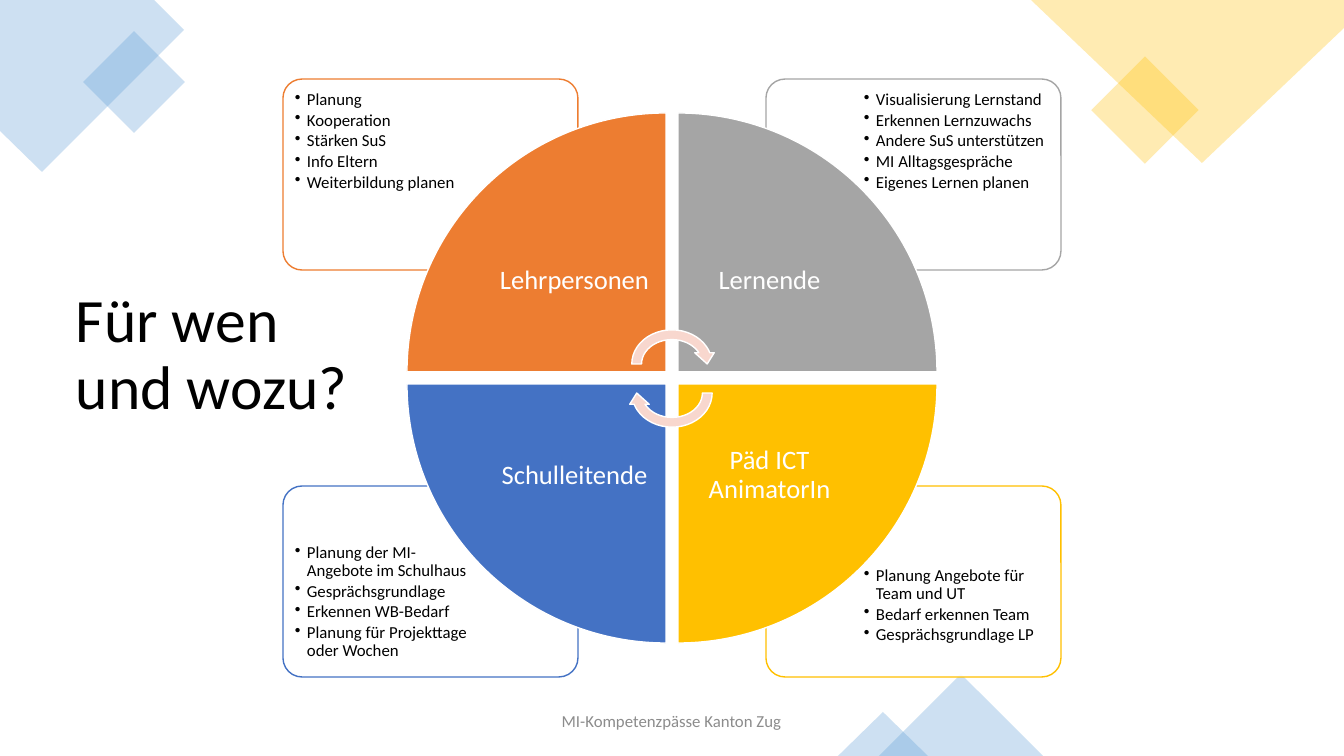
import lxml.etree
import pptx
import pptx.dml.color
import pptx.enum.shapes
import pptx.enum.text
import pptx.oxml.ns
import pptx.util

SHAPE = pptx.enum.shapes.MSO_SHAPE
ALIGN = pptx.enum.text.PP_ALIGN
ANCHOR = pptx.enum.text.MSO_ANCHOR
WIDTH, HEIGHT = 1344, 756
BLUE, YELLOW, WHITE = "5B9BD5", "FFC000", "FFFFFF"

# Colour, title, bullets, right half?, lower half?, wedge rotation, top inset of bullets
QUADRANTS = [
    (YELLOW, "Päd ICT AnimatorIn",
     ["Planung Angebote für Team und UT", "Bedarf erkennen Team",
      "Gesprächsgrundlage LP"], True, True, 180, 30),
    ("4472C4", "Schulleitende",
     ["Planung der MI-Angebote im Schulhaus", "Gesprächsgrundlage",
      "Erkennen WB-Bedarf", "Planung für Projekttage oder Wochen"],
     False, True, 270, 7),
    ("A5A5A5", "Lernende",
     ["Visualisierung Lernstand", "Erkennen Lernzuwachs",
      "Andere SuS unterstützen", "MI Alltagsgespräche",
      "Eigenes Lernen planen"], True, False, 90, 7),
    ("ED7D31", "Lehrpersonen",
     ["Planung", "Kooperation", "Stärken SuS", "Info Eltern",
      "Weiterbildung planen"], False, False, 0, 7),
]


def px(n):
    return pptx.util.Emu(round(n * 12192000 / WIDTH))


def rgb(color):
    return pptx.dml.color.RGBColor.from_string(color)


def add_xml(parent, tag, **attrs):
    return lxml.etree.SubElement(parent, pptx.oxml.ns.qn(tag), **attrs)


def mirror(x, y, w, h, right, lower):
    """Place a box of the upper left quadrant in any quadrant."""
    return (WIDTH - x - w if right else x, HEIGHT - y - h if lower else y, w, h)


class Deck:
    font = "Calibri"

    def __init__(self):
        self.prs = pptx.Presentation()
        self.prs.slide_width, self.prs.slide_height = px(WIDTH), px(HEIGHT)
        self.slide = self.prs.slides.add_slide(self.prs.slide_layouts[6])

    def paint(self, sp, fill, line=None, alpha=100):
        sp.shadow.inherit = False
        sp.fill.solid()
        sp.fill.fore_color.rgb = rgb(fill)
        if alpha < 100:
            clr = sp.fill._xPr.find(".//" + pptx.oxml.ns.qn("a:srgbClr"))
            add_xml(clr, "a:alpha", val=str(alpha * 1000))
        if line:
            sp.line.color.rgb = rgb(line)
            sp.line.width = pptx.util.Pt(1)
        else:
            sp.line.fill.background()

    def shape(self, kind, box, fill, line=None, alpha=100, rotation=0):
        sp = self.slide.shapes.add_shape(kind, *map(px, box))
        sp.rotation = rotation
        self.paint(sp, fill, line, alpha)
        return sp

    def polygon(self, points, fill, alpha):
        points = [(px(x), px(y)) for x, y in points]
        builder = self.slide.shapes.build_freeform(*points[0])
        builder.add_line_segments(points[1:], close=True)
        self.paint(builder.convert_to_shape(), fill, alpha=alpha)

    def text(self, box, text, size, color, insets=(10, 5, 10, 5), align=ALIGN.LEFT,
             anchor=ANCHOR.MIDDLE, spacing=0.9, bullets=False):
        tf = self.slide.shapes.add_textbox(*map(px, box)).text_frame
        tf.word_wrap = True
        tf.vertical_anchor = anchor
        tf.margin_left, tf.margin_top, tf.margin_right, tf.margin_bottom = map(px, insets)
        tf.text = text
        for p in tf.paragraphs:
            p.alignment = align
            p.line_spacing = spacing
            if bullets:
                p.level = 1
                p.space_after = pptx.util.Pt(1.8)
                pPr = p._p.get_or_add_pPr()
                pPr.set("marL", str(px(12)))
                pPr.set("indent", str(-px(12)))
                add_xml(pPr, "a:buChar", char="•")
            for r in p.runs:
                r.font.name = self.font
                r.font.size = pptx.util.Pt(size)
                r.font.color.rgb = rgb(color)


def main():
    deck = Deck()

    # Corner decoration
    deck.polygon([(154, 0), (0, 0), (0, 131), (42, 172), (184, 30)], BLUE, 30)
    deck.shape(SHAPE.RECTANGLE, (98, 46, 72, 72), BLUE, alpha=30, rotation=315)
    deck.shape(SHAPE.RECTANGLE, (1107, 72, 76, 76), YELLOW, alpha=30, rotation=315)
    deck.polygon([(1344, 0), (1031, 0), (1202, 163), (1344, 28)], YELLOW, 30)
    for box in [(879, 674, 164, 82), (838, 712, 90, 44)]:
        deck.shape(SHAPE.ISOSCELES_TRIANGLE, box, BLUE, alpha=30)

    # Title
    deck.text((66, 283, 1159, 146), "Für wen\vund wozu?", 44, "000000")

    # Cards with bullets
    for color, _, items, right, lower, _, top in QUADRANTS:
        card = deck.shape(SHAPE.ROUNDED_RECTANGLE, mirror(283, 79, 295, 191, right, lower),
                          WHITE, color, alpha=90)
        card.adjustments[0] = 0.1
        deck.text(mirror(288, 84, 199, 135, right, lower), "\n".join(items), 12, "000000",
                  insets=(7, top, 7, 7), anchor=ANCHOR.TOP, bullets=True)

    # Circle of wedges
    for color, title, _, right, lower, rotation, _ in QUADRANTS:
        deck.shape(SHAPE.PIE_WEDGE, mirror(407, 113, 259, 259, right, lower),
                   color, WHITE, rotation=rotation)
        deck.text(mirror(483, 189, 183, 183, right, lower), title, 19, WHITE,
                  insets=(15, 15, 15, 15), align=ALIGN.CENTER)

    # Cycle arrows
    for y, rotation in [(325, 0), (354, 180)]:
        deck.shape(SHAPE.CIRCULAR_ARROW, (627, y, 90, 78), "F8D7CE", WHITE,
                   rotation=rotation)

    # Footer
    deck.text((400, 701, 543, 40), "MI-Kompetenzpässe Kanton Zug", 12, "8C8C8C",
              align=ALIGN.CENTER, spacing=1.0)

    deck.prs.save("out.pptx")


if __name__ == "__main__":
    main()
